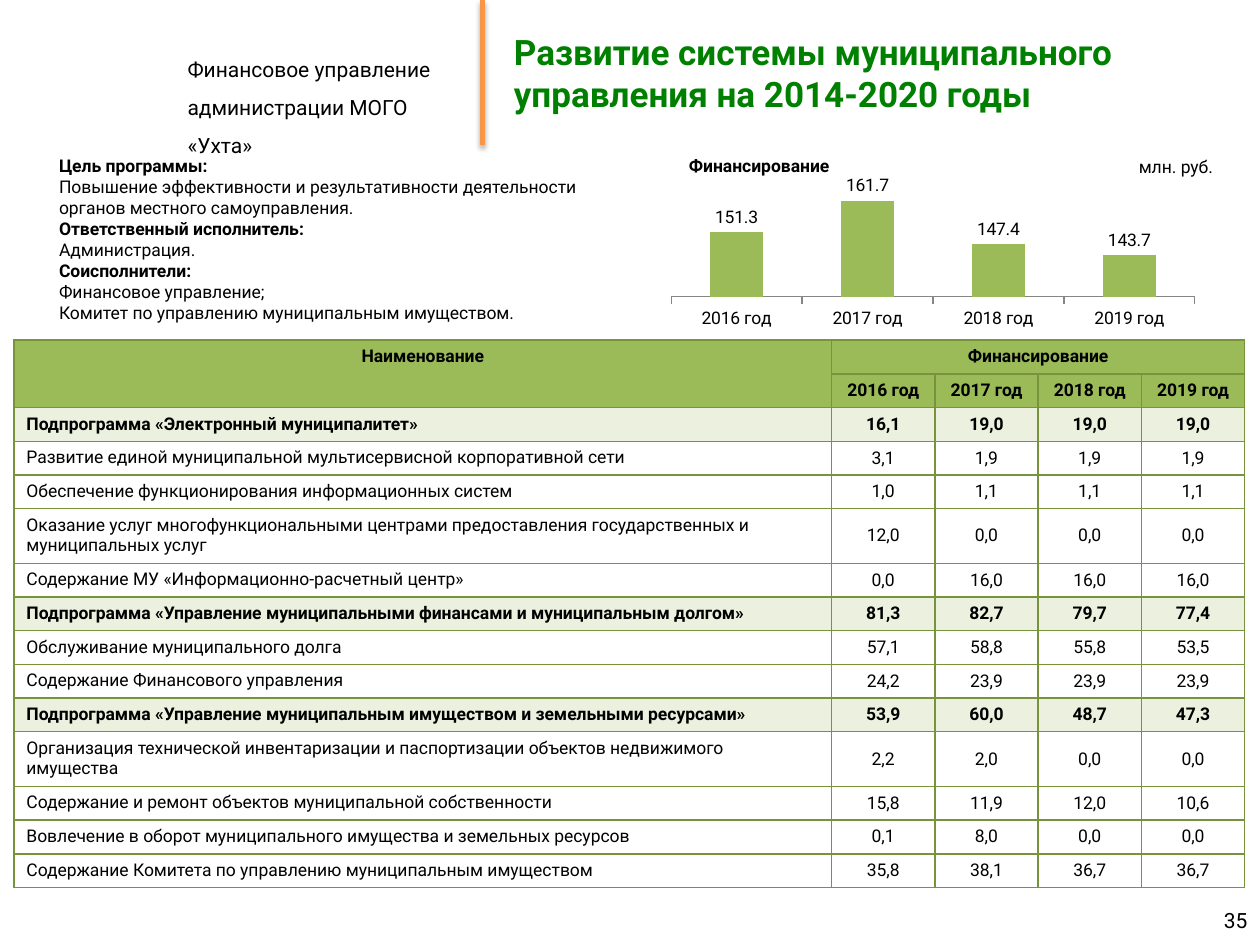
from lxml import etree
from pptx import Presentation
from pptx.chart.data import CategoryChartData
from pptx.dml.color import RGBColor
from pptx.enum.chart import XL_CHART_TYPE as ChartType, XL_LABEL_POSITION as LabelPos, XL_TICK_MARK as Tick
from pptx.enum.shapes import MSO_CONNECTOR as Connector
from pptx.enum.text import MSO_ANCHOR as Anchor, PP_ALIGN as Align
from pptx.oxml import parse_xml
from pptx.oxml.ns import nsdecls, qn
from pptx.util import Inches, Pt

BLACK = RGBColor(0x00, 0x00, 0x00)
WHITE = RGBColor(0xFF, 0xFF, 0xFF)
TITLE_GREEN = RGBColor(0x00, 0x80, 0x00)
ORANGE = RGBColor(0xF7, 0x96, 0x46)
GREEN = RGBColor(0x9B, 0xBB, 0x59)
PALE_GREEN = RGBColor(0xEB, 0xF1, 0xDE)
BORDER_GREEN = RGBColor(0x77, 0x93, 0x3C)
AXIS_GRAY = RGBColor(0x86, 0x86, 0x86)
FONT = "Roboto"

YEARS = ["2016 год", "2017 год", "2018 год", "2019 год"]
TOTALS = [151.3, 161.7, 147.4, 143.7]
GOALS = [
    ("Цель программы:", True),
    ("Повышение эффективности и результативности деятельности", False),
    ("органов местного самоуправления.", False),
    ("Ответственный исполнитель:", True),
    ("Администрация.", False),
    ("Соисполнители:", True),
    ("Финансовое управление;", False),
    ("Комитет по управлению муниципальным имуществом.", False),
]
# Subprogramme, its yearly figures, then its measures
PROGRAMMES = [
    ("Подпрограмма «Электронный муниципалитет»", "16,1 19,0 19,0 19,0", [
        ("Развитие единой муниципальной мультисервисной корпоративной сети", "3,1 1,9 1,9 1,9"),
        ("Обеспечение функционирования информационных систем", "1,0 1,1 1,1 1,1"),
        ("Оказание услуг многофункциональными центрами предоставления государственных и "
         "муниципальных услуг", "12,0 0,0 0,0 0,0"),
        ("Содержание МУ «Информационно-расчетный центр»", "0,0 16,0 16,0 16,0"),
    ]),
    ("Подпрограмма «Управление муниципальными финансами и муниципальным долгом»",
     "81,3 82,7 79,7 77,4", [
        ("Обслуживание муниципального долга", "57,1 58,8 55,8 53,5"),
        ("Содержание Финансового управления", "24,2 23,9 23,9 23,9"),
     ]),
    ("Подпрограмма «Управление муниципальным имуществом и земельными ресурсами»",
     "53,9 60,0 48,7 47,3", [
        ("Организация технической инвентаризации и паспортизации объектов недвижимого имущества",
         "2,2 2,0 0,0 0,0"),
        ("Содержание и ремонт объектов муниципальной собственности", "15,8 11,9 12,0 10,6"),
        ("Вовлечение в оборот муниципального имущества и земельных ресурсов", "0,1 8,0 0,0 0,0"),
        ("Содержание Комитета по управлению муниципальным имуществом", "35,8 38,1 36,7 36,7"),
     ]),
]


def add_run(p, text, size=10, bold=False, color=BLACK):
    r = p.add_run()
    r.text = text
    r.font.name, r.font.size, r.font.bold = FONT, Pt(size), bold
    r.font.color.rgb = color


def add_text(slide, box, lines, size=10, color=BLACK, align=Align.LEFT,
             anchor=Anchor.TOP, spacing=None, wrap=True):
    """Place (text, bold) lines in box, one paragraph each."""
    tf = slide.shapes.add_textbox(*map(Inches, box)).text_frame
    tf.word_wrap = wrap
    tf.vertical_anchor = anchor
    for i, (text, bold) in enumerate(lines):
        p = tf.add_paragraph() if i else tf.paragraphs[0]
        p.alignment = align
        if spacing:
            p.line_spacing = spacing
        add_run(p, text, size, bold, color)


def add_divider(slide, x, top, bottom):
    line = slide.shapes.add_connector(
        Connector.STRAIGHT, Inches(x), Inches(top), Inches(x), Inches(bottom))
    line.line.color.rgb = ORANGE
    line.line.width = Pt(3)
    line._element.spPr.append(parse_xml(
        f'<a:effectLst {nsdecls("a")}><a:outerShdw blurRad="39370" dist="22860" dir="5400000" '
        'rotWithShape="0"><a:srgbClr val="000000"><a:alpha val="35000"/></a:srgbClr>'
        '</a:outerShdw></a:effectLst>'))


def add_header(slide):
    add_text(slide, (1.39, 0.3, 2.2, 1), spacing=1.5, size=12,
             lines=[("Финансовое управление", False), ("администрации МОГО «Ухта»", False)])
    add_divider(slide, 3.83, 0, 1.15)
    add_text(slide, (3.98, 0, 6.02, 1.15), size=20, color=TITLE_GREEN, anchor=Anchor.MIDDLE,
             lines=[("Развитие системы муниципального управления на 2014-2020 годы", True)])


def add_funding_chart(slide, box):
    data = CategoryChartData(number_format="0.0")
    data.categories = YEARS
    data.add_series("Финансирование", TOTALS)
    chart = slide.shapes.add_chart(ChartType.COLUMN_CLUSTERED, *map(Inches, box), data).chart
    chart.has_legend = chart.has_title = False
    chart.font.name, chart.font.size = FONT, Pt(10)
    chart.font.color.rgb = BLACK

    # Hidden value axis, category axis with outside ticks
    value_axis = chart.value_axis
    value_axis.visible = value_axis.has_major_gridlines = False
    value_axis.minimum_scale, value_axis.maximum_scale = 130, 165
    category_axis = chart.category_axis
    category_axis.major_tick_mark = Tick.OUTSIDE
    category_axis.format.line.color.rgb = AXIS_GRAY

    # Columns and labels
    plot = chart.plots[0]
    plot.gap_width = 150
    plot.vary_by_categories = False
    fill = plot.series[0].format.fill
    fill.solid()
    fill.fore_color.rgb = GREEN
    plot.has_data_labels = True
    labels = plot.data_labels
    labels.show_value = True
    labels.position = LabelPos.OUTSIDE_END
    labels.number_format, labels.number_format_is_linked = "#,##0.0", False
    labels.font.name, labels.font.size = FONT, Pt(10)

    # Fixed inner plot area
    area = chart._chartSpace.chart.plotArea
    for old in area.findall(qn("c:layout")):
        area.remove(old)
    parts = "".join(f'<c:{k} val="{v}"/>' for k, v in (
        ("layoutTarget", "inner"), ("xMode", "edge"), ("yMode", "edge"),
        ("x", 0.02), ("y", 0.08), ("w", 0.96), ("h", 0.7)))
    area.insert(0, parse_xml(
        f'<c:layout {nsdecls("c")}><c:manualLayout>{parts}</c:manualLayout></c:layout>'))


def set_cell(cell, text, fill, bold=False, align=Align.CENTER, anchor=Anchor.TOP):
    tc_pr = cell._tc.get_or_add_tcPr()
    for side in ("lnL", "lnR", "lnT", "lnB"):
        ln = etree.SubElement(tc_pr, qn(f"a:{side}"), w=str(Pt(1)))
        solid = etree.SubElement(ln, qn("a:solidFill"))
        etree.SubElement(solid, qn("a:srgbClr"), val=str(BORDER_GREEN))
    cell.fill.solid()
    cell.fill.fore_color.rgb = fill
    cell.vertical_anchor = anchor
    if text:
        p = cell.text_frame.paragraphs[0]
        p.alignment = align
        add_run(p, text, bold=bold)


def add_funding_table(slide, left, top):
    rows = []
    for name, totals, measures in PROGRAMMES:
        rows.append((name, totals, True))
        rows += [(*measure, False) for measure in measures]
    widths = [6.49] + [0.82] * len(YEARS)
    row_height = 0.26
    table = slide.shapes.add_table(
        len(rows) + 2, len(widths), Inches(left), Inches(top),
        Inches(sum(widths)), Inches(row_height * (len(rows) + 2))).table
    table.first_row = table.horz_banding = False
    for column, width in zip(table.columns, widths):
        column.width = Inches(width)
    for row in table.rows:
        row.height = Inches(row_height)
    table.rows[5].height = Inches(0.42)  # two-line name

    # Two header rows
    for r, texts in enumerate((["Наименование", "Финансирование", "", "", ""], [""] + YEARS)):
        for c, text in enumerate(texts):
            set_cell(table.cell(r, c), text, GREEN, bold=True)
    table.cell(0, 0).merge(table.cell(1, 0))
    table.cell(0, 1).merge(table.cell(0, len(YEARS)))

    # Subprogrammes and measures
    for r, (name, figures, is_total) in enumerate(rows, start=2):
        fill = PALE_GREEN if is_total else WHITE
        set_cell(table.cell(r, 0), name, fill, is_total, Align.LEFT)
        for c, figure in enumerate(figures.split(), start=1):
            set_cell(table.cell(r, c), figure, fill, is_total, anchor=Anchor.MIDDLE)


def main():
    prs = Presentation()
    prs.slide_width, prs.slide_height = Inches(10), Inches(7.5)
    slide = prs.slides.add_slide(prs.slide_layouts[6])
    add_header(slide)
    add_text(slide, (7.67, 7.1, 2.33, 0.4), [("35", False)], size=12,
             align=Align.RIGHT, anchor=Anchor.MIDDLE)
    add_funding_chart(slide, (5.24, 1.4, 4.33, 1.22))
    add_funding_table(slide, 0.11, 2.7)
    add_text(slide, (0.37, 1.18, 4.31, 1.45), GOALS, wrap=False)
    add_text(slide, (5.37, 1.18, 1.46, 0.27), [("Финансирование", True)], wrap=False)
    add_text(slide, (8.94, 1.19, 0.8, 0.27), [("млн. руб.", False)], wrap=False)
    prs.save("out.pptx")


if __name__ == "__main__":
    main()
